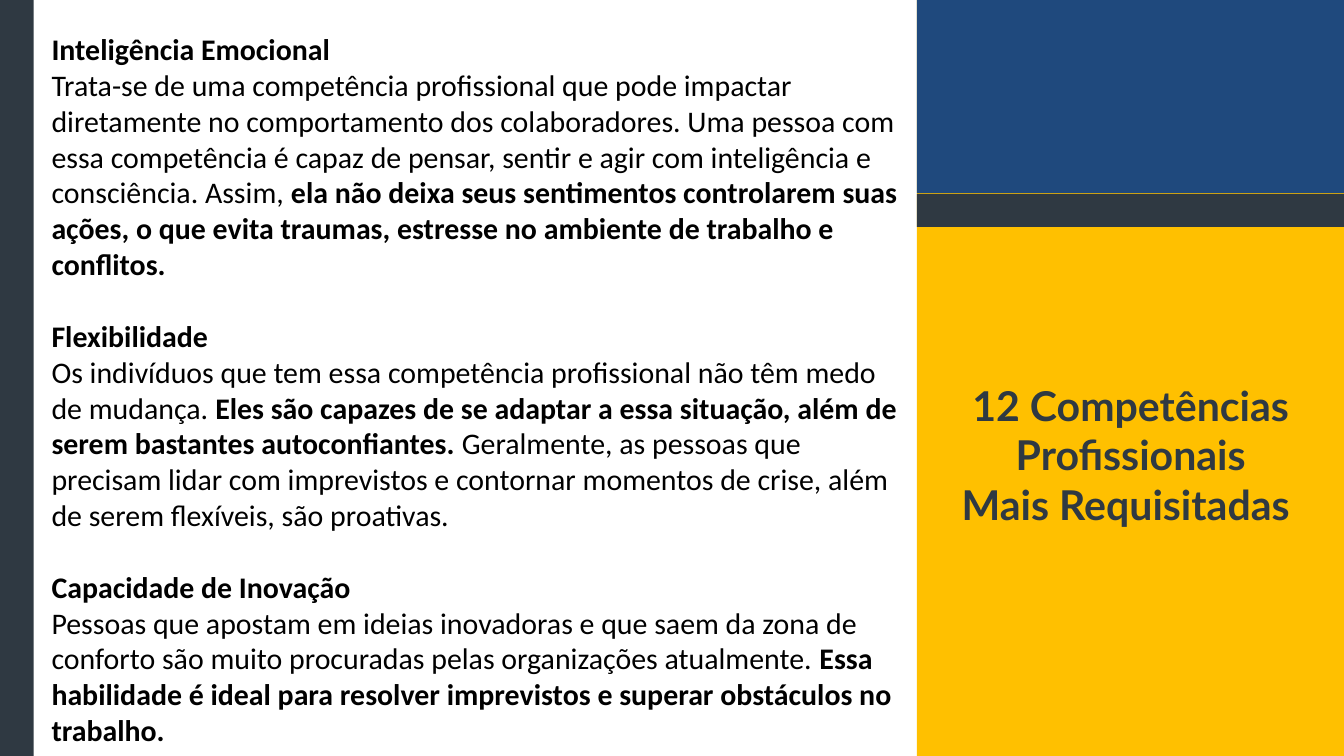
from pptx import Presentation
from pptx import util as u
from pptx.dml.color import RGBColor
from pptx.enum import shapes, text
from pptx.oxml import xmlchemy
from lxml import etree

PX = 9525  # 96 px to the inch
SLATE = RGBColor(0x2F, 0x39, 0x42)
AMBER = RGBColor(0xFF, 0xC0, 0x00)
NAVY = RGBColor(0x1F, 0x49, 0x7D)
BLACK = RGBColor(0, 0, 0)
DRAWING = "{http://schemas.openxmlformats.org/drawingml/2006/main}"


def place(shape, left, top, width, height):
    """Position a shape by lengths in px."""
    values = {"left": left, "top": top, "width": width, "height": height}
    for name, value in values.items():
        setattr(shape, name, u.Emu(value * PX))


def add_paragraph(frame, first, runs, paragraph_format, font_format, color):
    """Append one paragraph made of (text, bold) runs."""
    para = frame.paragraphs[0] if first else frame.add_paragraph()
    for name, value in paragraph_format.items():
        setattr(para, name, value)
    for words, bold in runs:
        span = para.add_run()
        span.text = words
        span.font.bold = bold
        span.font.color.rgb = color
        for name, value in font_format.items():
            setattr(span.font, name, value)
    return para


deck = Presentation()
deck.slide_width = u.Emu(1920 * PX)
deck.slide_height = u.Emu(1080 * PX)
page = deck.slides.add_slide(deck.slide_layouts[1])
title = page.shapes.title
body = page.placeholders[1]

# Coloured panels
panels = [
    (0, 0, 48, 1080, SLATE),
    (1310, -3, 610, 1083, AMBER),
    (1310, -3, 610, 279, NAVY),
    (1310, 277, 610, 47, SLATE),
]
for left, top, width, height, color in panels:
    panel = page.shapes.add_shape(shapes.MSO_SHAPE.RECTANGLE, 0, 0, 0, 0)
    place(panel, left, top, width, height)
    panel.shadow.inherit = False
    panel.fill.solid()
    panel.fill.fore_color.rgb = color
    panel.line.fill.background()

# Both texts stand in front of the panels
frame_format = {
    "auto_size": text.MSO_AUTO_SIZE.SHAPE_TO_FIT_TEXT,
    "vertical_anchor": text.MSO_ANCHOR.TOP,
}
for box in (body, title):
    box.element.getparent().append(box.element)
    for name, value in frame_format.items():
        setattr(box.text_frame, name, value)

place(body, 64, 39, 1230, 1044)
body.text_frame.word_wrap = True
skills = [
    ("Inteligência Emocional", [
        ("Trata-se de uma competência profissional que pode impactar diretamente no "
         "comportamento dos colaboradores. Uma pessoa com essa competência é capaz de "
         "pensar, sentir e agir com inteligência e consciência. Assim, ", False),
        ("ela não deixa seus sentimentos controlarem suas ações, o que evita traumas, "
         "estresse no ambiente de trabalho e conflitos.", True),
    ]),
    ("Flexibilidade", [
        ("Os indivíduos que tem essa competência profissional não têm medo de mudança. ", False),
        ("Eles são capazes de se adaptar a essa situação, além de serem bastantes "
         "autoconfiantes. ", True),
        ("Geralmente, as pessoas que precisam lidar com imprevistos e contornar momentos "
         "de crise, além de serem flexíveis, são proativas.", False),
    ]),
    ("Capacidade de Inovação", [
        ("Pessoas que apostam em ideias inovadoras e que saem da zona de conforto são "
         "muito procuradas pelas organizações atualmente. ", False),
        ("Essa habilidade é ideal para resolver imprevistos e superar obstáculos no "
         "trabalho.", True),
    ]),
]
body_font = {"name": "Calibri", "size": u.Pt(32)}
for index, (heading, description) in enumerate(skills):
    gap = u.Pt(38.4 if index else 0)
    for runs, before in (([(heading, True)], gap), (description, u.Pt(0))):
        first = index == 0 and runs is not description
        para = add_paragraph(body.text_frame, first, runs,
                             {"space_before": before, "alignment": text.PP_ALIGN.LEFT},
                             body_font, BLACK)
        properties = para.runs[0].font._element.getparent().getparent().get_or_add_pPr()
        properties.set("marL", "0")
        properties.set("indent", "0")
        etree.SubElement(properties, DRAWING + "buNone")

place(title, 1339, 539, 553, 223)
title.text_frame.word_wrap = False
title_font = {"name": "Lato", "size": u.Pt(44)}
for index, line in enumerate(["12 Competências", "Profissionais", "Mais Requisitadas "]):
    add_paragraph(title.text_frame, index == 0, [(line, True)],
                  {"space_before": u.Pt(0), "alignment": text.PP_ALIGN.CENTER},
                  title_font, SLATE)

deck.save("out.pptx")
